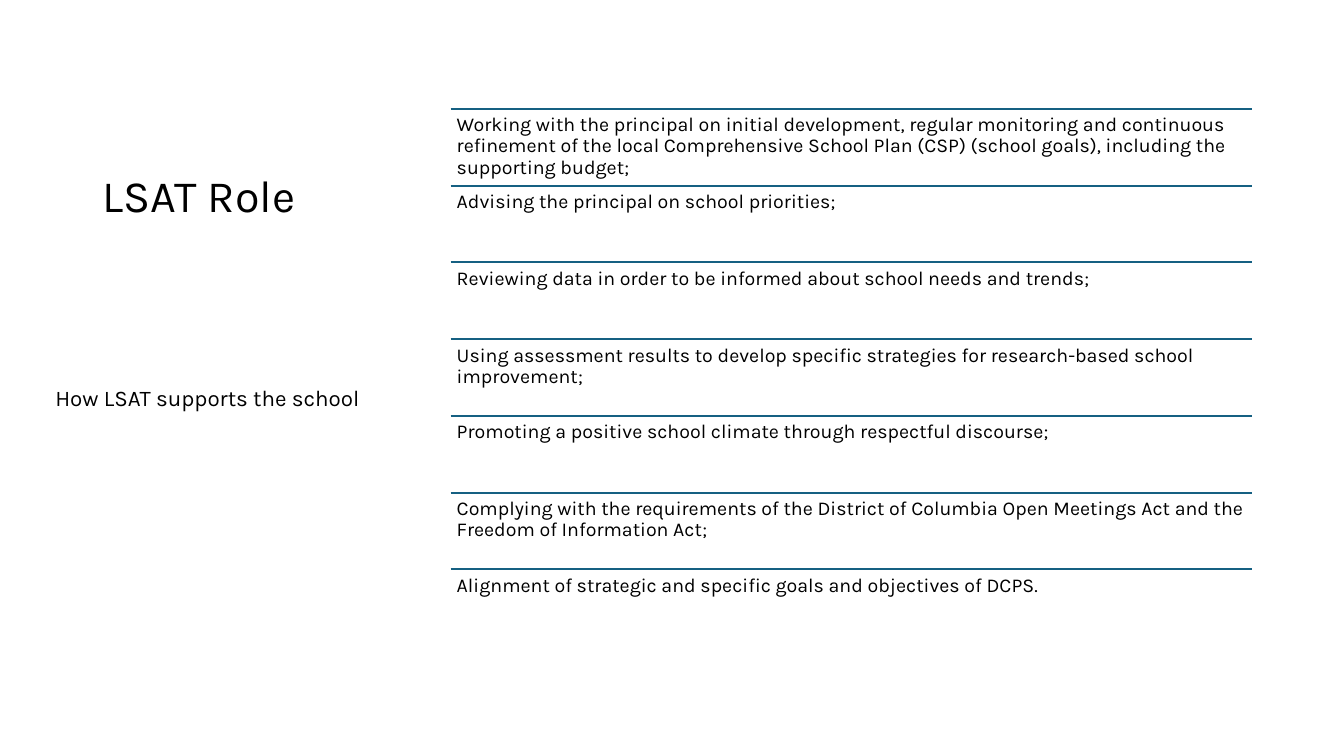
from dataclasses import dataclass

from pptx import Presentation
from pptx import util as u
from pptx.dml.color import RGBColor
from pptx.enum import shapes, text
from pptx.oxml.ns import qn
from lxml import etree


@dataclass(frozen=True)
class Theme:
    font: str = "Karla"
    ink: RGBColor = RGBColor(0x00, 0x00, 0x00)
    rule: RGBColor = RGBColor(0x15, 0x60, 0x82)
    title_size: float = 32
    subtitle_size: float = 16
    duty_size: float = 14
    rule_width: float = 1.5
    line_spacing: float = 0.9


@dataclass(frozen=True)
class Area:
    left: float
    top: float
    width: float
    height: float

    def row(self, index: int, count: int) -> "Area":
        height = self.height / count
        return Area(self.left, self.top + index * height, self.width, height)


@dataclass(frozen=True)
class Insets:
    side: float = 0.1
    top: float = 0.05
    bottom: float = 0.05


@dataclass(frozen=True)
class Label:
    wording: str
    area: Area
    size: float
    insets: Insets = Insets()
    anchor: text.MSO_ANCHOR = text.MSO_ANCHOR.TOP


THEME = Theme()
TITLE = Label("LSAT Role", Area(0.92, 0.5, 4.3, 1.75), THEME.title_size,
              anchor=text.MSO_ANCHOR.BOTTOM)
SUBTITLE = Label("How LSAT supports the school", Area(0.45, 2.25, 3.76, 4.16),
                 THEME.subtitle_size, Insets(top=1.59))
DUTY_LIST = Area(4.47, 1.08, 7.95, 5.33)
DUTY_INSETS = Insets(0.06, 0.06, 0.06)
DUTIES = [
    "Working with the principal on initial development, regular monitoring and continuous "
    "refinement of the local Comprehensive School Plan (CSP) (school goals), including the "
    "supporting budget;",
    "Advising the principal on school priorities;",
    "Reviewing data in order to be informed about school needs and trends;",
    "Using assessment results to develop specific strategies for research-based school "
    "improvement;",
    "Promoting a positive school climate through respectful discourse;",
    "Complying with the requirements of the District of Columbia Open Meetings Act and the "
    "Freedom of Information Act;",
    "Alignment of strategic and specific goals and objectives of DCPS.",
]


def add_label(parent, label: Label) -> None:
    area = label.area
    box = parent.add_textbox(u.Inches(area.left), u.Inches(area.top),
                             u.Inches(area.width), u.Inches(area.height))
    frame = box.text_frame
    frame.word_wrap = True
    frame.vertical_anchor = label.anchor
    frame.margin_left = frame.margin_right = u.Inches(label.insets.side)
    frame.margin_top = u.Inches(label.insets.top)
    frame.margin_bottom = u.Inches(label.insets.bottom)
    paragraph = frame.paragraphs[0]
    paragraph.text = label.wording
    paragraph.line_spacing = THEME.line_spacing
    paragraph.font.name = THEME.font
    paragraph.font.size = u.Pt(label.size)
    paragraph.font.color.rgb = THEME.ink


def add_rule(parent, area: Area) -> None:
    top = u.Inches(area.top)
    rule = parent.add_connector(shapes.MSO_CONNECTOR.STRAIGHT, u.Inches(area.left), top,
                                u.Inches(area.left + area.width), top)
    rule.line.color.rgb = THEME.rule
    rule.line.width = u.Pt(THEME.rule_width)
    etree.SubElement(rule._element.spPr, qn("a:effectLst"))


def add_duties(parent) -> None:
    group = parent.add_group_shape()
    for index, duty in enumerate(DUTIES):
        area = DUTY_LIST.row(index, len(DUTIES))
        add_rule(group.shapes, area)
        add_label(group.shapes, Label(duty, area, THEME.duty_size, DUTY_INSETS))


def main() -> None:
    presentation = Presentation()
    presentation.slide_width = u.Inches(13.33)
    presentation.slide_height = u.Inches(7.5)
    slide = presentation.slides.add_slide(presentation.slide_layouts[6])
    add_label(slide.shapes, TITLE)
    add_duties(slide.shapes)
    add_label(slide.shapes, SUBTITLE)
    presentation.save("out.pptx")


if __name__ == "__main__":
    main()
